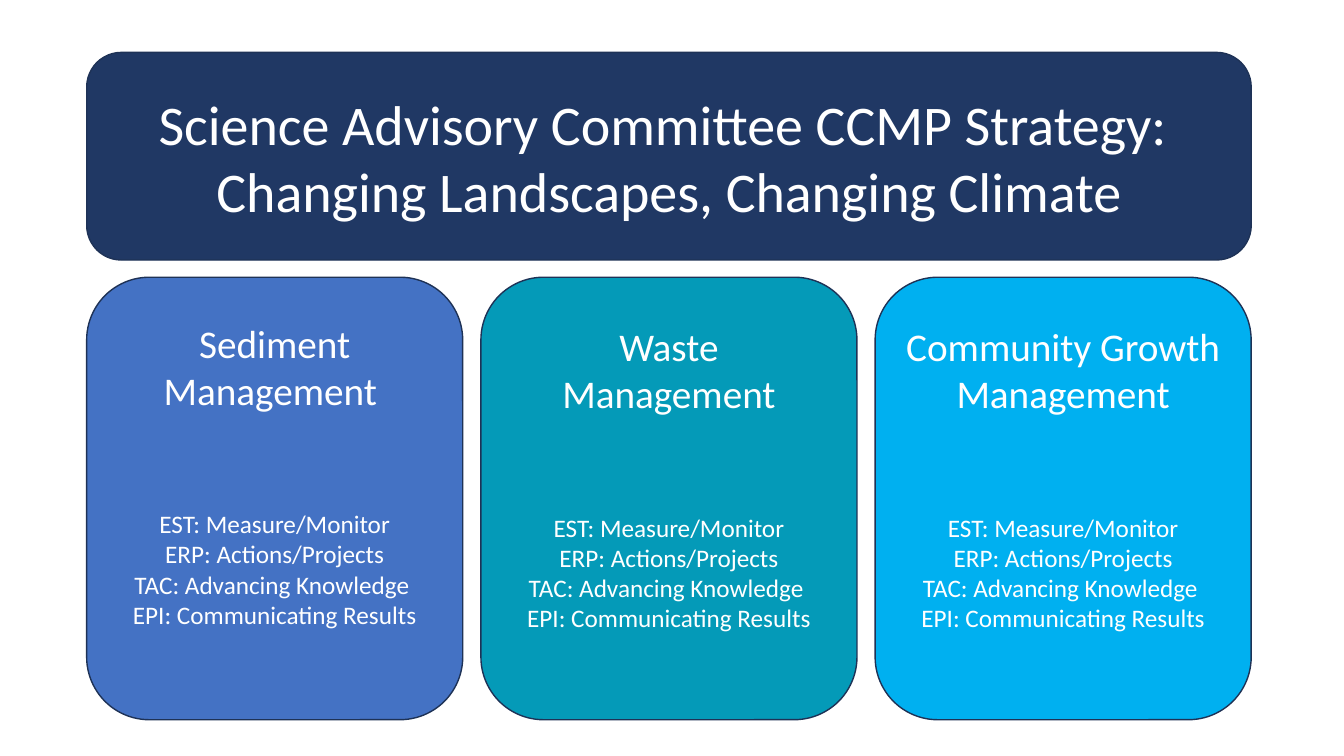
"""Build the Science Advisory Committee CCMP strategy slide."""
from pptx import Presentation
from pptx.dml.color import RGBColor
from pptx.enum.shapes import MSO_SHAPE
from pptx.enum.text import MSO_ANCHOR, MSO_AUTO_SIZE, PP_ALIGN
from pptx.util import Inches, Pt

NAVY = RGBColor(0x20, 0x38, 0x64)
OUTLINE = RGBColor(0x1E, 0x32, 0x56)
BLUE = RGBColor(0x44, 0x72, 0xC4)
TEAL = RGBColor(0x04, 0x9A, 0xB8)
SKY = RGBColor(0x00, 0xB0, 0xF0)
WHITE = RGBColor(0xFF, 0xFF, 0xFF)

TITLE = ["Science Advisory Committee CCMP Strategy: ",
         "Changing Landscapes, Changing Climate"]
PILLARS = [("Sediment Management ", BLUE, 0.53),
           ("Waste Management", TEAL, 0.46),
           ("Community Growth Management", SKY, 0.46)]
ROLES = ["EST: Measure/Monitor", "ERP: Actions/Projects",
         "TAC: Advancing Knowledge ", "EPI: Communicating Results"]

LEFT, GAP = 0.86, 0.18
BANNER_TOP, BANNER_HEIGHT = 0.52, 2.06
PILLAR_TOP, PILLAR_WIDTH, PILLAR_HEIGHT = 2.75, 3.73, 4.39
BANNER_WIDTH = len(PILLARS) * PILLAR_WIDTH + (len(PILLARS) - 1) * GAP


def add_panel(page, area, color):
    panel = page.shapes.add_shape(MSO_SHAPE.ROUNDED_RECTANGLE, *area)
    panel.shadow.inherit = False
    panel.fill.solid()
    panel.fill.fore_color.rgb = color
    panel.line.color.rgb = OUTLINE
    panel.line.width = Pt(1)
    return panel


def write_lines(frame, lines, bottom=0.05):
    frame.word_wrap = True
    frame.auto_size = MSO_AUTO_SIZE.NONE
    frame.vertical_anchor = MSO_ANCHOR.MIDDLE
    frame.margin_bottom = Inches(bottom)
    for index, (text, size, before) in enumerate(lines):
        para = frame.add_paragraph() if index else frame.paragraphs[0]
        para.alignment = PP_ALIGN.CENTER
        para.space_before = Pt(before)
        span = para.add_run()
        span.text = text
        span.font.name = "Calibri"
        span.font.size = Pt(size)
        span.font.color.rgb = WHITE


def main():
    deck = Presentation()
    deck.slide_width, deck.slide_height = Inches(13.33), Inches(7.5)
    page = deck.slides.add_slide(deck.slide_layouts[5])

    for column, (heading, color, bottom) in enumerate(PILLARS):
        left = LEFT + column * (PILLAR_WIDTH + GAP)
        area = [Inches(n) for n in (left, PILLAR_TOP, PILLAR_WIDTH, PILLAR_HEIGHT)]
        lines = [(heading, 28, 0)]
        lines += [(role, 18, 0 if row else 68) for row, role in enumerate(ROLES)]
        write_lines(add_panel(page, area, color).text_frame, lines, bottom)

    area = [Inches(n) for n in (LEFT, BANNER_TOP, BANNER_WIDTH, BANNER_HEIGHT)]
    banner = add_panel(page, area, NAVY)
    title = page.shapes.title
    title.left, title.top, title.width, title.height = area
    write_lines(title.text_frame, [(line, 40, 0) for line in TITLE])
    banner._element.addnext(title._element)

    deck.save("out.pptx")


if __name__ == "__main__":
    main()
